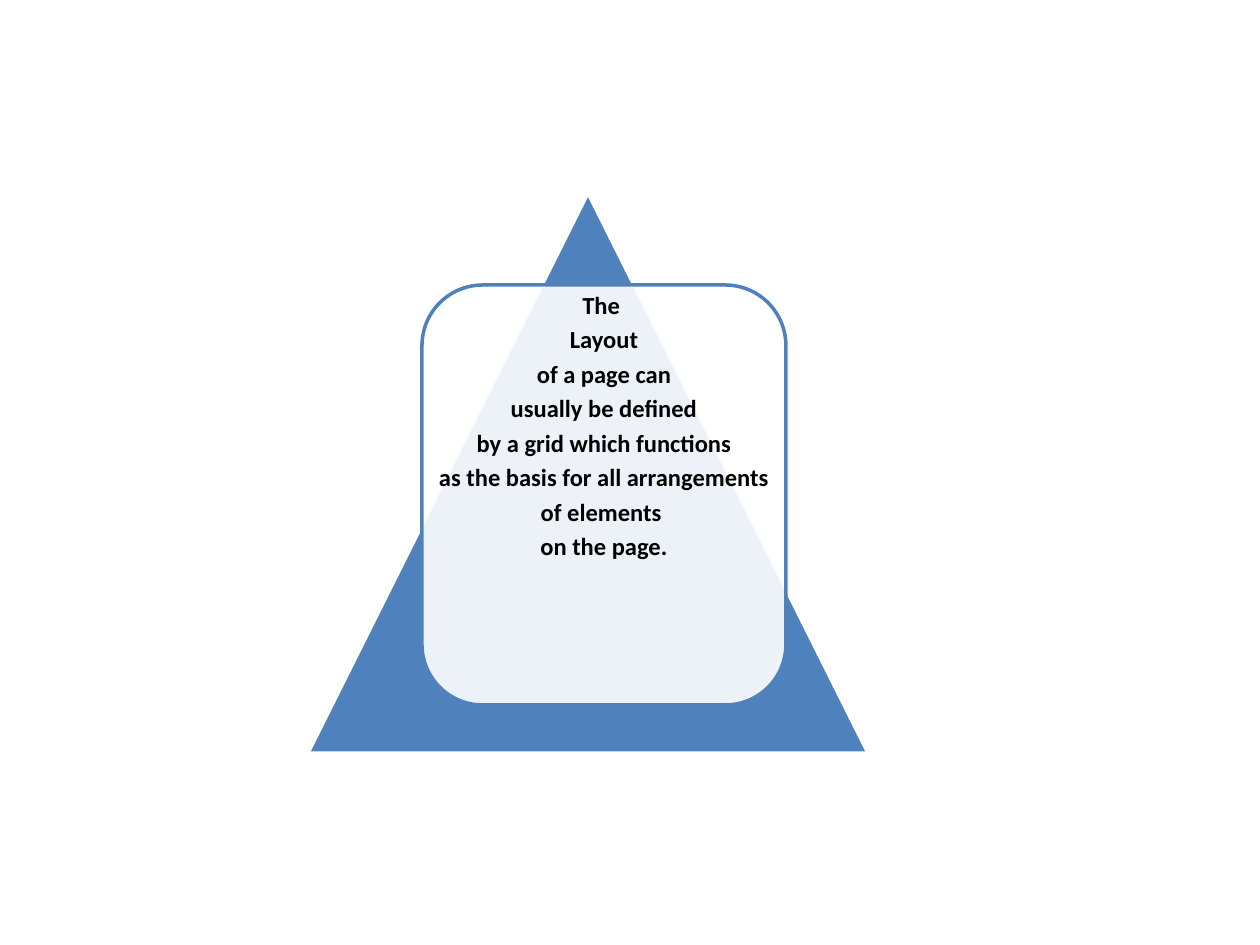
import pptx
import pptx.util
import pptx.dml.color
import pptx.enum.shapes
import pptx.enum.text
import pptx.oxml
import pptx.oxml.ns

EMU_PER_PX = 914400 / 126
LINES = [
    "The ",
    "Layout",
    "of a page can",
    "usually be defined",
    "by a grid which functions",
    "as the basis for all arrangements",
    "of elements ",
    "on the page.",
]


def px(length):
    return pptx.util.Emu(round(length * EMU_PER_PX))


def color(hex_value):
    return pptx.dml.color.RGBColor.from_string(hex_value)


def apply_format(target, values):
    for name, value in values.items():
        setattr(target, name, value)


class PyramidSlide:
    blue = "4F81BD"
    white = "FFFFFF"
    line_width = pptx.util.Pt(2)
    font_format = {"name": "Calibri", "size": pptx.util.Pt(14), "bold": True}
    paragraph_format = {
        "alignment": pptx.enum.text.PP_ALIGN.CENTER,
        "line_spacing": 0.9,
        "space_after": pptx.util.Pt(4.6),
    }
    frame_format = {
        "word_wrap": True,
        "vertical_anchor": pptx.enum.text.MSO_ANCHOR.TOP,
        **{f"margin_{side}": px(8) for side in ("left", "top", "right", "bottom")},
    }

    def __init__(self, presentation):
        self.slide = presentation.slides.add_slide(presentation.slide_layouts[6])
        self.group = self.slide.shapes.add_group_shape()

    def add_shape(self, kind, box, fill, line, opacity=100):
        shape = self.group.shapes.add_shape(kind, *map(px, box))
        shape.shadow.inherit = False
        shape.fill.solid()
        shape.fill.fore_color.rgb = color(fill)
        shape.line.color.rgb = color(line)
        shape.line.width = self.line_width
        if opacity < 100:
            fill_color = shape.fill._xPr.find(".//" + pptx.oxml.ns.qn("a:srgbClr"))
            alpha = pptx.oxml.parse_xml(
                f'<a:alpha {pptx.oxml.ns.nsdecls("a")} val="{opacity * 1000}"/>'
            )
            fill_color.append(alpha)

    def add_text(self, box, lines):
        frame = self.group.shapes.add_textbox(*map(px, box)).text_frame
        apply_format(frame, self.frame_format)
        frame.text = "\n".join(lines)
        for paragraph in frame.paragraphs:
            apply_format(paragraph, self.paragraph_format)
            font = paragraph.runs[0].font
            apply_format(font, self.font_format)
            font.color.rgb = color("000000")


def main():
    presentation = pptx.Presentation()
    apply_format(presentation, {"slide_width": px(1260), "slide_height": px(945)})
    pyramid = PyramidSlide(presentation)
    shapes = pptx.enum.shapes.MSO_SHAPE
    panel = (422, 285, 364, 420)
    pyramid.add_shape(
        shapes.ISOSCELES_TRIANGLE, (308, 193, 560, 560), pyramid.blue, pyramid.white
    )
    pyramid.add_shape(
        shapes.ROUNDED_RECTANGLE, panel, pyramid.white, pyramid.blue, opacity=90
    )
    pyramid.add_text(panel, LINES)
    presentation.save("out.pptx")


if __name__ == "__main__":
    main()
